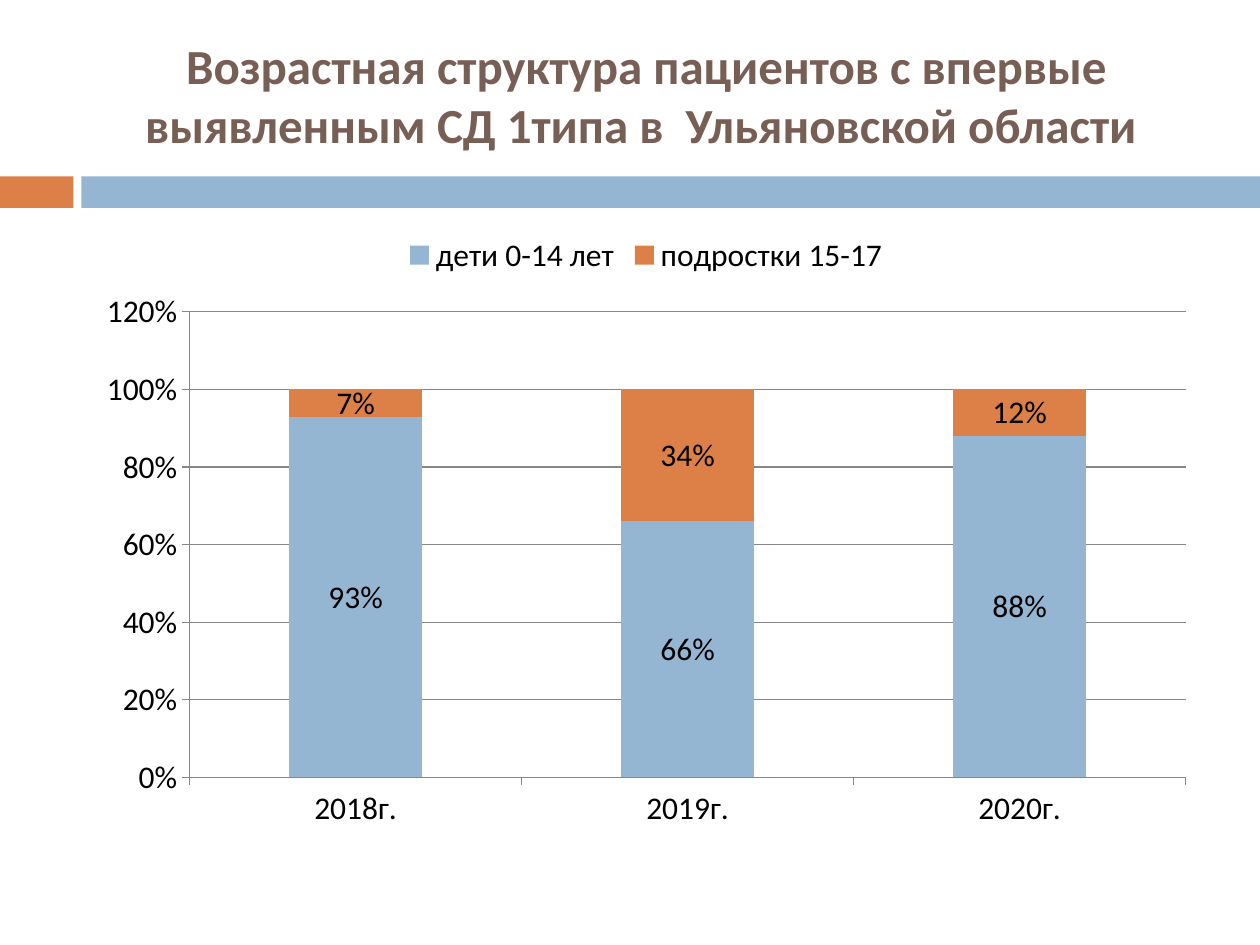
"""Build a slide with the age structure of new type 1 diabetes patients."""
from dataclasses import dataclass

from pptx import Presentation
from pptx.chart.data import CategoryChartData
from pptx.dml.color import RGBColor
from pptx.enum.chart import XL_CHART_TYPE, XL_LABEL_POSITION, XL_LEGEND_POSITION, XL_TICK_MARK
from pptx.enum.shapes import MSO_SHAPE
from pptx.enum.text import MSO_ANCHOR, MSO_AUTO_SIZE, PP_ALIGN
from pptx.util import Pt

STACKED = XL_CHART_TYPE.COLUMN_STACKED
LABEL_CENTER = XL_LABEL_POSITION.CENTER
LEGEND_TOP = XL_LEGEND_POSITION.TOP
TICK_OUTSIDE = XL_TICK_MARK.OUTSIDE
RECTANGLE = MSO_SHAPE.RECTANGLE
MIDDLE = MSO_ANCHOR.MIDDLE
NO_AUTO_SIZE = MSO_AUTO_SIZE.NONE
CENTER = PP_ALIGN.CENTER

BLUE = RGBColor(0x94, 0xB6, 0xD2)
ORANGE = RGBColor(0xDD, 0x80, 0x47)
BROWN = RGBColor(0x77, 0x5F, 0x55)
BLACK = RGBColor(0, 0, 0)
GRAY = RGBColor(0x87, 0x87, 0x87)

FONT = "Calibri"
PERCENT = "0%"
PAGE_WIDTH, PAGE_HEIGHT = 720, 540
CONTENT_LEFT, CONTENT_WIDTH = 48.2, 642.2
BAND_TOP, BAND_HEIGHT = 100.8, 18


@dataclass(frozen=True)
class Band:
    left: float
    width: float
    color: RGBColor


@dataclass(frozen=True)
class AgeGroup:
    name: str
    shares: tuple[float, ...]
    color: RGBColor


TITLE = "Возрастная структура пациентов с впервые выявленным СД 1типа в  Ульяновской области "
BANDS = (Band(0, 42, ORANGE), Band(46.5, PAGE_WIDTH - 46.5, BLUE))
YEARS = ("2018г.", "2019г.", "2020г.")
AGE_GROUPS = (
    AgeGroup("дети 0-14 лет", (0.93, 0.66, 0.88), BLUE),
    AgeGroup("подростки 15-17", (0.07, 0.34, 0.12), ORANGE),
)


def format_font(font, *, size: float, color: RGBColor, bold: bool = False) -> None:
    font.name = FONT
    font.size = Pt(size)
    font.bold = bold
    font.color.rgb = color


def draw_band(page, band: Band) -> None:
    box = page.shapes.add_shape(
        RECTANGLE, Pt(band.left), Pt(BAND_TOP), Pt(band.width), Pt(BAND_HEIGHT)
    )
    box.shadow.inherit = False
    box.fill.solid()
    box.fill.fore_color.rgb = band.color
    box.line.fill.background()


def write_title(page, text: str, *, size: float, color: RGBColor) -> None:
    box = page.shapes.title
    box.left, box.top = Pt(CONTENT_LEFT), Pt(15.1)
    box.width, box.height = Pt(CONTENT_WIDTH), Pt(77.8)
    frame = box.text_frame
    frame.word_wrap = True
    frame.auto_size = NO_AUTO_SIZE
    frame.vertical_anchor = MIDDLE
    para = frame.paragraphs[0]
    para.alignment = CENTER
    span = para.add_run()
    span.text = text
    format_font(span.font, size=size, color=color, bold=True)


def format_axis(axis) -> None:
    axis.major_tick_mark = TICK_OUTSIDE
    axis.format.line.color.rgb = GRAY
    axis.format.line.width = Pt(0.75)


def draw_chart(page, groups: tuple[AgeGroup, ...]) -> None:
    data = CategoryChartData(number_format=PERCENT)
    data.categories = YEARS
    for group in groups:
        data.add_series(group.name, group.shares)
    chart = page.shapes.add_chart(
        STACKED, Pt(CONTENT_LEFT), Pt(126), Pt(CONTENT_WIDTH), Pt(354.2), data
    ).chart
    format_font(chart.font, size=18, color=BLACK)
    chart.has_title = False
    chart.has_legend = True
    chart.legend.position = LEGEND_TOP
    chart.legend.include_in_layout = False

    format_axis(chart.category_axis)
    values = chart.value_axis
    format_axis(values)
    values.minimum_scale, values.maximum_scale, values.major_unit = 0, 1.2, 0.2
    values.tick_labels.number_format = PERCENT
    values.tick_labels.number_format_is_linked = False
    values.has_major_gridlines = True
    values.major_gridlines.format.line.color.rgb = GRAY
    values.major_gridlines.format.line.width = Pt(0.75)

    plot = chart.plots[0]
    plot.gap_width, plot.overlap = 150, 100
    plot.vary_by_categories = False
    for series, group in zip(plot.series, groups):
        series.format.fill.solid()
        series.format.fill.fore_color.rgb = group.color
        labels = series.data_labels
        labels.show_value = True
        labels.number_format = PERCENT
        labels.number_format_is_linked = False
        labels.position = LABEL_CENTER


def main() -> None:
    deck = Presentation()
    deck.slide_width, deck.slide_height = Pt(PAGE_WIDTH), Pt(PAGE_HEIGHT)
    page = deck.slides.add_slide(deck.slide_layouts.get_by_name("Title Only"))
    for band in BANDS:
        draw_band(page, band)
    write_title(page, TITLE, size=28, color=BROWN)
    draw_chart(page, AGE_GROUPS)
    deck.save("out.pptx")


if __name__ == "__main__":
    main()
